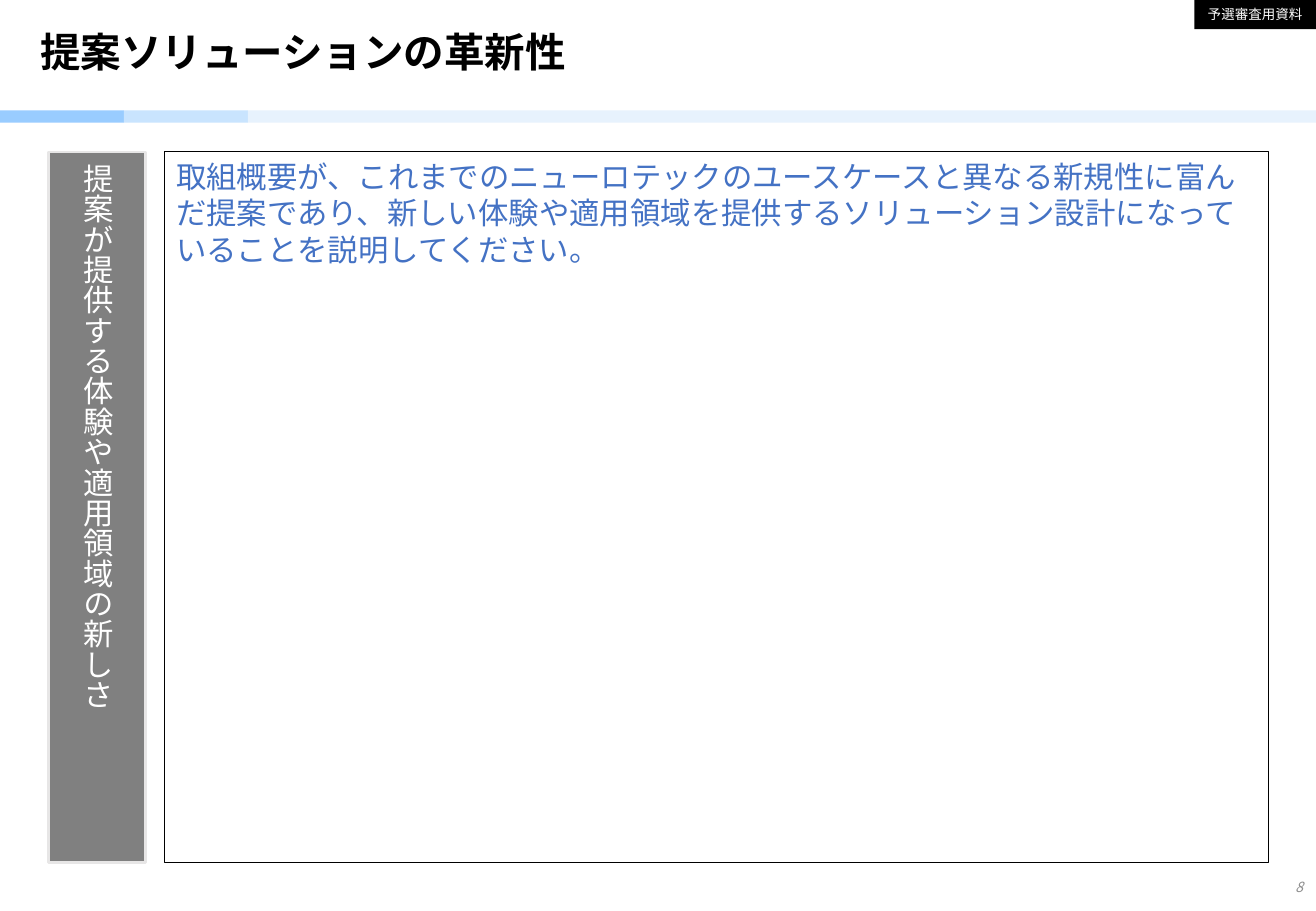
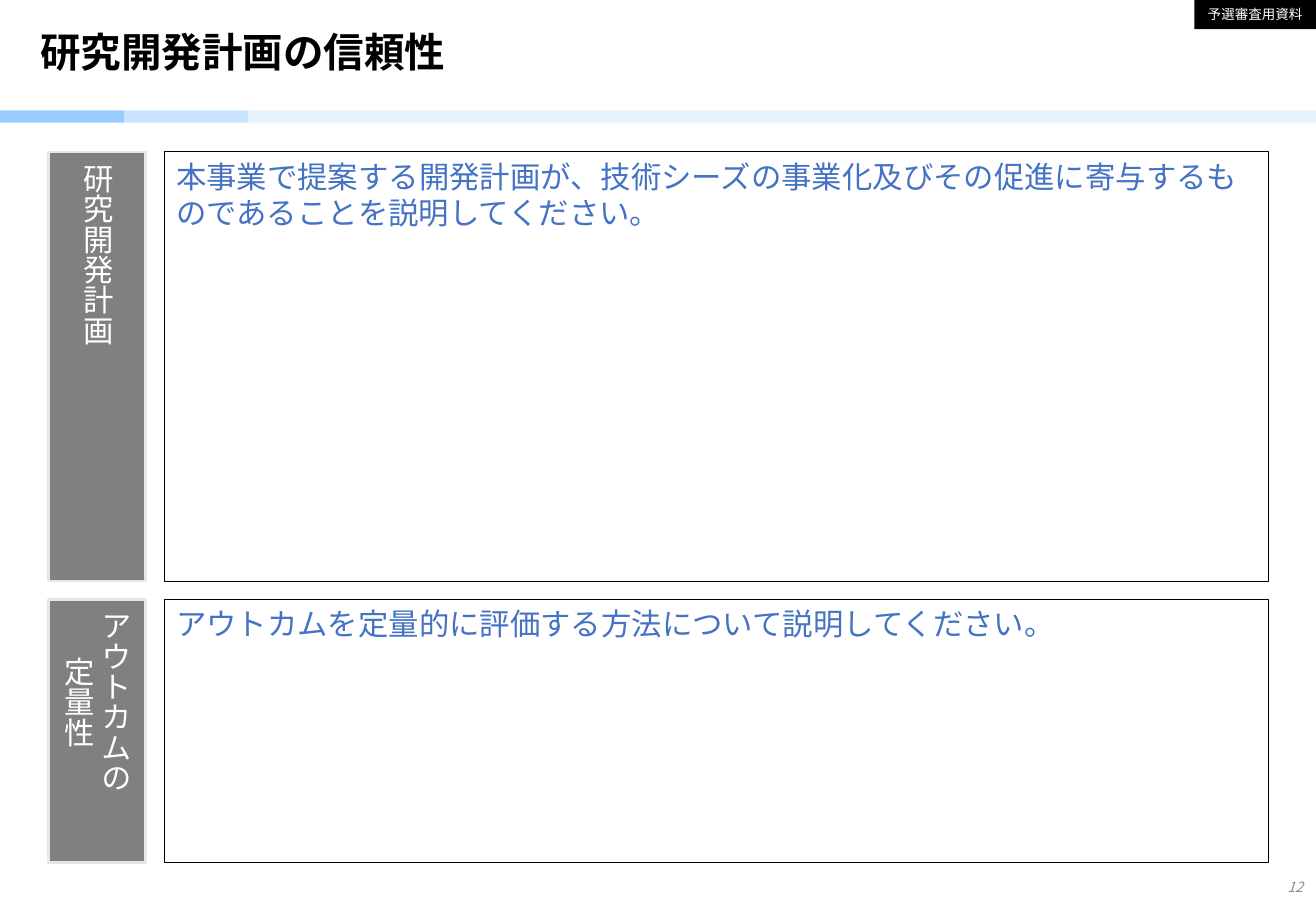
from pptx import Presentation
from pptx.dml.color import RGBColor
from pptx.enum.lang import MSO_LANGUAGE_ID
from pptx.enum.shapes import MSO_SHAPE
from pptx.enum.text import MSO_ANCHOR, MSO_AUTO_SIZE, PP_ALIGN
from pptx.oxml.ns import qn
from pptx.util import Inches, Pt

RECT = MSO_SHAPE.RECTANGLE
TOP, MIDDLE = MSO_ANCHOR.TOP, MSO_ANCHOR.MIDDLE
LEFT, CENTER, RIGHT = PP_ALIGN.LEFT, PP_ALIGN.CENTER, PP_ALIGN.RIGHT
GROW = MSO_AUTO_SIZE.SHAPE_TO_FIT_TEXT
JAPANESE = MSO_LANGUAGE_ID.JAPANESE

BLACK = RGBColor(0x00, 0x00, 0x00)
WHITE = RGBColor(0xFF, 0xFF, 0xFF)
GRAY = RGBColor(0x80, 0x80, 0x80)
PALE_GRAY = RGBColor(0xE7, 0xE6, 0xE6)
PAGE_GRAY = RGBColor(0x8C, 0x8C, 0x8C)
GUIDE_BLUE = RGBColor(0x44, 0x72, 0xC4)
BAND_COLORS = (RGBColor(0x99, 0xCC, 0xFF), RGBColor(0xC9, 0xE4, 0xFE),
               RGBColor(0xE7, 0xF2, 0xFD))

TITLE_FONT, BODY_FONT, SMALL_FONT = "Arial", "Calibri", "Noto Sans CJK JP"

SLIDE_W, SLIDE_H = 10.83, 7.5
BAND_Y, BAND_H, BAND_STEP = 0.91, 0.1, 1.02
LABEL_X, LABEL_W = 0.4, 0.8
GAP = 0.15
PANEL_X = LABEL_X + LABEL_W + GAP
PANEL_W = 9.09
BODY_TOP, BODY_BOTTOM = 1.25, 7.1
TAG_W, TAG_H = 1, 0.24

# Title, title width, page, and (label lines, guide text, share of height) rows
SLIDES = [
    ("提案ソリューションの革新性", 8.98, 8, [
        (["提案が提供する体験や適用領域の新しさ"],
         "取組概要が、これまでのニューロテックのユースケースと異なる新規性に富んだ提案であり、"
         "新しい体験や適用領域を提供するソリューション設計になっていることを説明してください。",
         1),
    ]),
    ("研究開発計画の信頼性", 7.81, 12, [
        (["研究開発計画"],
         "本事業で提案する開発計画が、技術シーズの事業化及びその促進に寄与するものであることを"
         "説明してください。",
         0.62),
        (["アウトカムの", "定量性"],
         "アウトカムを定量的に評価する方法について説明してください。",
         0.38),
    ]),
]


def write(s, lines, font, size, color, align=LEFT, anchor=TOP):
    """Fill a shape with one paragraph per line, all in one style."""
    tf = s.text_frame
    tf.text = "\n".join(lines)
    tf.word_wrap = True
    tf.vertical_anchor = anchor
    for p in tf.paragraphs:
        p.alignment = align
        for r in p.runs:
            r.font.name = font
            r.font.size = Pt(size)
            r.font.color.rgb = color
            r.font.language_id = JAPANESE
            latin = r.font._element.find(qn("a:latin"))
            ea = latin.makeelement(qn("a:ea"), {"typeface": font})
            latin.addnext(ea)
    return tf


def add_rect(slide, x, y, w, h, fill=None, line=None, line_width=0.5):
    s = slide.shapes.add_shape(RECT, Inches(x), Inches(y), Inches(w), Inches(h))
    s.shadow.inherit = False
    if fill is None:
        s.fill.background()
    else:
        s.fill.solid()
        s.fill.fore_color.rgb = fill
    if line is None:
        s.line.fill.background()
    else:
        s.line.color.rgb = line
        s.line.width = Pt(line_width)
    return s


def add_textbox(slide, x, y, w, h):
    return slide.shapes.add_textbox(Inches(x), Inches(y), Inches(w), Inches(h))


def add_title(slide, text, width):
    s = slide.shapes.title
    s.left, s.top, s.width, s.height = map(Inches, (0.23, 0.07, width, 0.76))
    p = write(s, [text], TITLE_FONT, 24, BLACK, anchor=MIDDLE).paragraphs[0]
    p.line_spacing = 0.9
    p.runs[0].font.bold = True


def add_band(slide):
    for i, color in enumerate(BAND_COLORS):
        x = i * BAND_STEP
        last = i == len(BAND_COLORS) - 1
        add_rect(slide, x, BAND_Y, SLIDE_W - x if last else BAND_STEP, BAND_H, color)


def add_tag(slide):
    s = add_rect(slide, SLIDE_W - TAG_W, 0, TAG_W, TAG_H, BLACK)
    write(s, ["予選審査用資料"], SMALL_FONT, 8, WHITE, CENTER).auto_size = GROW


def add_page_number(slide, number):
    s = add_textbox(slide, SLIDE_W - TAG_W, BODY_BOTTOM, 0.99, 0.4)
    tf = write(s, [str(number)], SMALL_FONT, 8.3, PAGE_GRAY, RIGHT, MIDDLE)
    tf.paragraphs[0].runs[0].font.italic = True


def add_vertical_label(slide, lines, y, h):
    add_rect(slide, LABEL_X, y, LABEL_W, h, GRAY, PALE_GRAY, 1.5)
    w = 0.2 + 0.3 * len(lines)
    s = add_textbox(slide, LABEL_X + (LABEL_W - w) / 2, y, w, h)
    tf = write(s, lines, BODY_FONT, 18, WHITE, CENTER, MIDDLE)
    tf.auto_size = GROW
    tf._txBody.bodyPr.set("vert", "eaVert")


def add_rows(slide, rows):
    """Stack label and panel pairs over the body area by their shares."""
    free = BODY_BOTTOM - BODY_TOP - GAP * (len(rows) - 1)
    y = BODY_TOP
    for lines, guide, share in rows:
        h = free * share
        add_vertical_label(slide, lines, y, h)
        panel = add_rect(slide, PANEL_X, y, PANEL_W, h, line=BLACK)
        write(panel, [guide], BODY_FONT, 18, GUIDE_BLUE)
        y += h + GAP


def main():
    prs = Presentation()
    prs.slide_width, prs.slide_height = Inches(SLIDE_W), Inches(SLIDE_H)
    title_only = prs.slide_layouts[5]
    for title, width, page, rows in SLIDES:
        slide = prs.slides.add_slide(title_only)
        add_band(slide)
        add_title(slide, title, width)
        add_page_number(slide, page)
        add_rows(slide, rows)
        add_tag(slide)
    prs.save("out.pptx")


if __name__ == "__main__":
    main()
